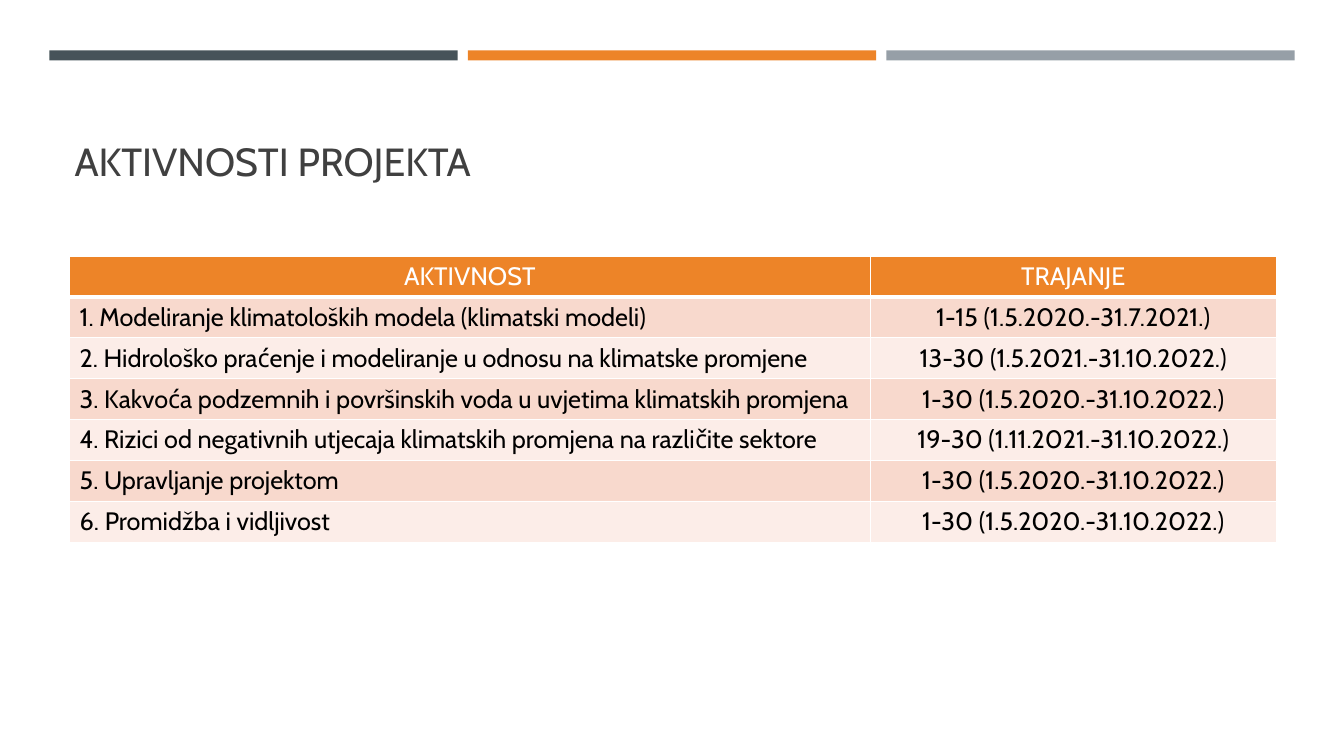
from lxml.etree import SubElement
from pptx import Presentation
from pptx.dml.color import RGBColor
from pptx.enum.shapes import MSO_SHAPE as Shape
from pptx.enum.text import MSO_ANCHOR as Anchor, PP_ALIGN as Align
from pptx.oxml.ns import qn
from pptx.util import Inches, Pt

FONT = "Cabin"
WHITE, ORANGE = "FFFFFF", "ED8428"
BAR_COLORS = ["465359", ORANGE, "969FA7"]
BAND_COLORS = ["F8D9CD", "FCEDE8"]
ROWS = [
    ("AKTIVNOST", "TRAJANJE"),
    ("1. Modeliranje klimatoloških modela (klimatski modeli)", "1-15 (1.5.2020.-31.7.2021.)"),
    ("2. Hidrološko praćenje i modeliranje u odnosu na klimatske promjene", "13-30 (1.5.2021.-31.10.2022.)"),
    ("3. Kakvoća podzemnih i površinskih voda u uvjetima klimatskih promjena", "1-30 (1.5.2020.-31.10.2022.)"),
    ("4. Rizici od negativnih utjecaja klimatskih promjena na različite sektore", "19-30 (1.11.2021.-31.10.2022.)"),
    ("5. Upravljanje projektom", "1-30 (1.5.2020.-31.10.2022.)"),
    ("6. Promidžba i vidljivost", "1-30 (1.5.2020.-31.10.2022.)"),
]


def color(value):
    return RGBColor.from_string(value)


def format_text(paragraph, size, value, align):
    paragraph.alignment = align
    for run in paragraph.runs:
        run.font.name = FONT
        run.font.size = Pt(size)
        run.font.bold = False
        run.font.color.rgb = color(value)


def add_bars(slide, left, top, width, height, gap=0.1):
    bar_width = (width - gap * (len(BAR_COLORS) - 1)) / len(BAR_COLORS)
    for index, value in enumerate(BAR_COLORS):
        bar_left = left + index * (bar_width + gap)
        bar = slide.shapes.add_shape(
            Shape.RECTANGLE, Inches(bar_left), Inches(top), Inches(bar_width), Inches(height))
        bar.shadow.inherit = False
        bar.fill.solid()
        bar.fill.fore_color.rgb = color(value)
        bar.line.fill.background()


def add_title(slide, left, top, width, height):
    title = slide.shapes.title
    title.left, title.top = Inches(left), Inches(top)
    title.width, title.height = Inches(width), Inches(height)
    title.text_frame.text = "AKTIVNOSTI PROJEKTA"
    title.text_frame.vertical_anchor = Anchor.BOTTOM
    format_text(title.text_frame.paragraphs[0], 28, "404040", Align.LEFT)


def set_borders(cell, bottom_width):
    properties = cell._tc.get_or_add_tcPr()
    for side, width in (("L", 1), ("R", 1), ("T", 1), ("B", bottom_width)):
        line = SubElement(properties, qn(f"a:ln{side}"), w=str(Pt(width)))
        fill = SubElement(line, qn("a:solidFill"))
        SubElement(fill, qn("a:srgbClr"), val=WHITE)


def add_activities(slide, left, top, width, height, first_width=7.94):
    table = slide.shapes.add_table(
        len(ROWS), 2, Inches(left), Inches(top), Inches(width), Inches(height)).table
    table.columns[0].width = Inches(first_width)
    table.columns[1].width = Inches(width - first_width)
    for row, texts in enumerate(ROWS):
        header = row == 0
        for column, text in enumerate(texts):
            cell = table.cell(row, column)
            set_borders(cell, 3 if header else 1)
            cell.fill.solid()
            cell.fill.fore_color.rgb = color(ORANGE if header else BAND_COLORS[(row - 1) % 2])
            cell.text_frame.text = text
            align = Align.CENTER if header or column == 1 else Align.LEFT
            format_text(cell.text_frame.paragraphs[0], 18, WHITE if header else "000000", align)


def main():
    presentation = Presentation()
    presentation.slide_width, presentation.slide_height = Inches(13.33), Inches(7.5)
    slide = presentation.slides.add_slide(presentation.slide_layouts[5])
    add_bars(slide, 0.49, 0.5, 12.35, 0.1)
    add_title(slide, 0.64, 0.77, 12.06, 1.11)
    add_activities(slide, 0.69, 2.54, 11.97, 2.84)
    presentation.save("out.pptx")


if __name__ == "__main__":
    main()
